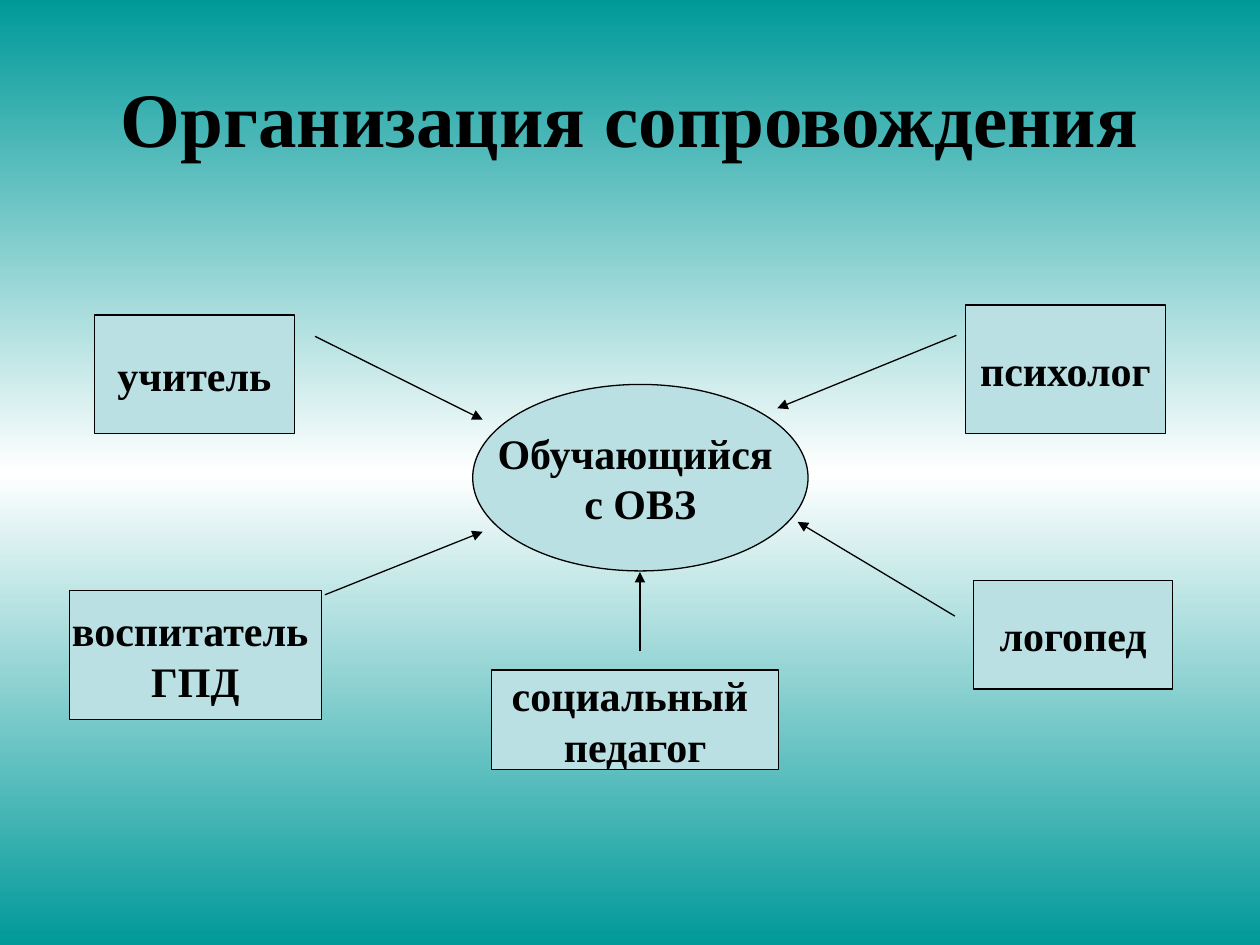
from copy import deepcopy

from lxml.etree import SubElement
from pptx import Presentation
from pptx.dml.color import RGBColor
from pptx.enum.shapes import MSO_CONNECTOR, MSO_SHAPE
from pptx.enum.text import MSO_ANCHOR, PP_ALIGN
from pptx.oxml.ns import qn
from pptx.util import Cm, Pt

COLORS = {"ink": "000000", "node": "BBE0E3", "edge": "009999", "middle": "FFFFFF"}
FONT = {"name": "Times New Roman", "bold": True}
NO_MARGINS = dict.fromkeys(
    ("margin_left", "margin_right", "margin_top", "margin_bottom"), 0)

# Offsets are in cm from the corner of the diagram box
PUPIL = ("Обучающийся \nс ОВЗ", 8.13, 1.6, 6.76, 3.76)
# Text, left, top, width, height, arrow start, arrow end
SPECIALISTS = [
    ("учитель", 0.5, 0.2, 4.04, 2.39, (4.95, 0.63), (8.33, 2.31)),
    ("психолог", 18.06, 0, 4.04, 2.59, (17.88, 0.61), (14.27, 2.08)),
    ("логопед", 18.23, 5.56, 4.01, 2.18, (17.85, 6.27), (14.68, 4.37)),
    ("воспитатель \nГПД", 0, 5.76, 5.08, 2.59, (5.15, 5.84), (8.33, 4.57)),
    ("социальный \nпедагог", 8.51, 7.36, 5.79, 2.01, (11.5, 6.98), (11.5, 5.38)),
]


def color(name):
    return RGBColor.from_string(COLORS[name])


def apply(target, values):
    for name, value in values.items():
        setattr(target, name, value)


def write(frame, text, size):
    frame.text = text
    frame.vertical_anchor = MSO_ANCHOR.MIDDLE
    for paragraph in frame.paragraphs:
        paragraph.alignment = PP_ALIGN.CENTER
        for run in paragraph.runs:
            apply(run.font, {**FONT, "size": Pt(size)})
            run.font.color.rgb = color("ink")


def draw_line(line):
    line.color.rgb = color("ink")
    line.width = Pt(0.75)


def paint_background(slide):
    fill = slide.background.fill
    fill.gradient()
    fill.gradient_angle = 270
    first = fill.gradient_stops[0]._gs
    first.addnext(deepcopy(first))
    for stop, position, name in zip(
            fill.gradient_stops, (0, 0.5, 1), ("edge", "middle", "edge")):
        stop.position = position
        stop.color.rgb = color(name)


def add_title(slide, text, left, top, width, height):
    title = slide.shapes.title
    apply(title, {"left": Cm(left), "top": Cm(top),
                  "width": Cm(width), "height": Cm(height)})
    write(title.text_frame, text, 44)


def add_node(slide, kind, text, left, top, width, height):
    node = slide.shapes.add_shape(kind, Cm(left), Cm(top), Cm(width), Cm(height))
    node.shadow.inherit = False
    node.fill.solid()
    node.fill.fore_color.rgb = color("node")
    draw_line(node.line)
    apply(node.text_frame, {**NO_MARGINS, "word_wrap": False})
    write(node.text_frame, text, 24)


def add_arrow(slide, start, end):
    arrow = slide.shapes.add_connector(
        MSO_CONNECTOR.STRAIGHT, *(Cm(value) for value in (*start, *end)))
    draw_line(arrow.line)
    SubElement(arrow.line._get_or_add_ln(), qn("a:tailEnd"), type="triangle")
    SubElement(arrow._element.spPr, qn("a:effectLst"))


def add_diagram(slide, left, top):
    # Pupil in the centre
    text, x, y, width, height = PUPIL
    add_node(slide, MSO_SHAPE.OVAL, text, left + x, top + y, width, height)

    # Specialists around, each with an arrow towards the pupil
    for text, x, y, width, height, start, end in SPECIALISTS:
        add_node(slide, MSO_SHAPE.RECTANGLE, text, left + x, top + y, width, height)
        add_arrow(slide, *((left + px, top + py) for px, py in (start, end)))


def main():
    deck = Presentation()
    deck.slide_width, deck.slide_height = Cm(25.4), Cm(19.05)
    slide = deck.slides.add_slide(deck.slide_layouts.get_by_name("Title Only"))
    paint_background(slide)
    add_title(slide, "Организация сопровождения", 1.27, 0.76, 22.86, 3.18)
    add_diagram(slide, 1.4, 6.15)
    deck.save("out.pptx")


if __name__ == "__main__":
    main()
